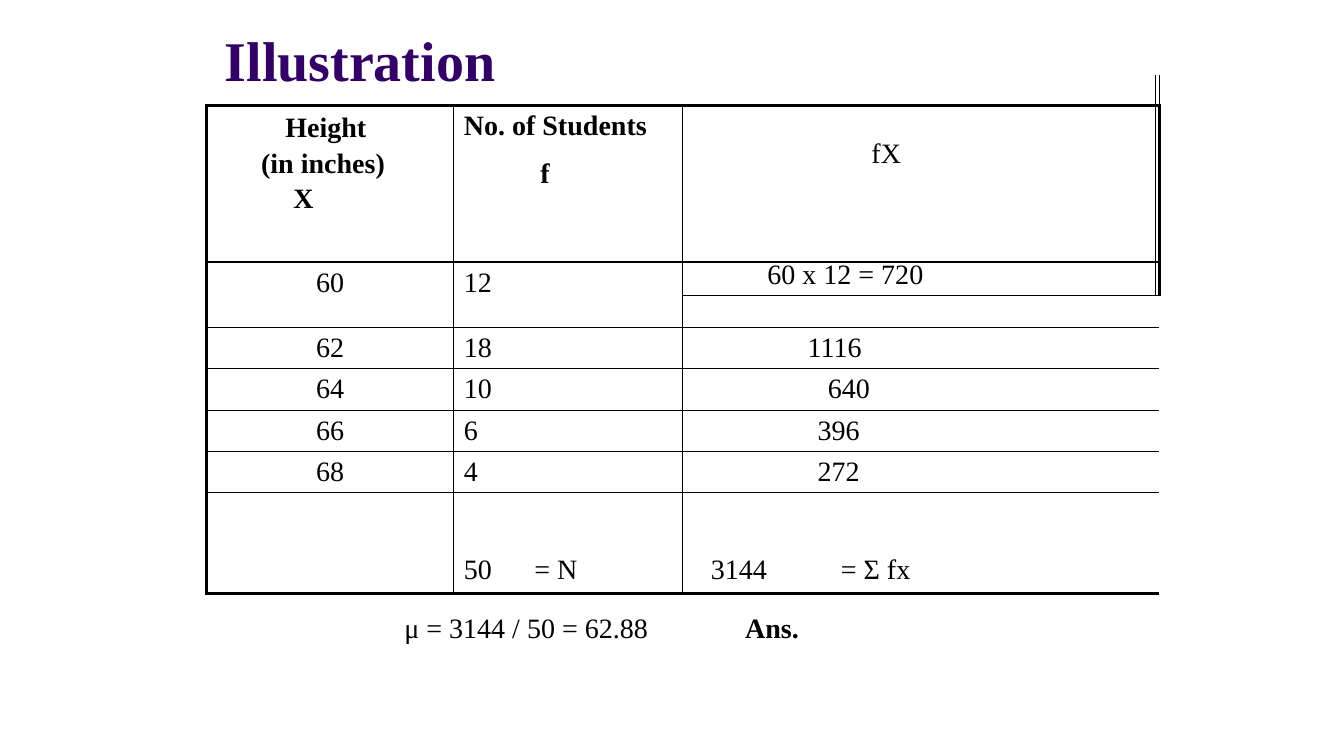
import pptx
import pptx.dml.color
import pptx.enum.text
import pptx.oxml
import pptx.oxml.ns
import pptx.util

Inches, Pt = pptx.util.Inches, pptx.util.Pt
CENTER = pptx.enum.text.PP_ALIGN.CENTER
FONT = "Times New Roman"
BLACK, PURPLE = "000000", "330066"
PLAIN_STYLE = "{2D5ABB26-0587-4C30-8999-92F81FD0307C}"

SLIDE_W, SLIDE_H = 13.33, 7.5
TABLE_LEFT, TABLE_TOP = 2.05, 0.74
COLUMNS = [2.45, 2.27, 4.69, 0.03]
ROWS = [0.31, 1.55, 0.33, 0.32] + [0.41] * 4 + [1]
THICK, MEDIUM, THIN = 2.25, 1, 0.75

# Height, number of students, product, indent of the product; the first
# height takes two table rows
FREQUENCIES = [
    ("60", "12", "60 x 12 = 720", 0.84),
    ("62", "18", "1116", 1.24),
    ("64", "10", "640", 1.44),
    ("66", "6", "396", 1.34),
    ("68", "4", "272", 1.34),
]


def color(hex_string):
    return pptx.dml.color.RGBColor.from_string(hex_string)


def write(frame, text, size=20, bold=False, ink=BLACK, align=None, left=0,
          right=0, first=0, line=None, before=None, tab=None, top=None,
          new=False, bold_tail=""):
    """Write one paragraph; lengths in inches, line and before in points."""
    paragraph = frame.add_paragraph() if new else frame.paragraphs[0]
    if top is not None:
        frame.margin_top = Inches(top)
    properties = paragraph._p.get_or_add_pPr()
    for name, length in (("marL", left), ("marR", right), ("indent", first)):
        if length:
            properties.set(name, str(Inches(length)))
    if line:
        paragraph.line_spacing = Pt(line)
    if before:
        paragraph.space_before = Pt(before)
    if tab:
        properties.append(pptx.oxml.parse_xml(
            f'<a:tabLst {pptx.oxml.ns.nsdecls("a")}>'
            f'<a:tab pos="{Inches(tab)}" algn="l"/></a:tabLst>'))
    if align is not None:
        paragraph.alignment = align
    for part, is_bold in ((text, bold), (bold_tail, True)):
        if part:
            run = paragraph.add_run()
            run.text = part
            run.font.name, run.font.size = FONT, Pt(size)
            run.font.bold = is_bold
            run.font.color.rgb = color(ink)


def write_cell(cell, text, **style):
    style.setdefault("top", 0.05)
    cell.margin_top = Inches(style.pop("top"))
    write(cell.text_frame, text, **style)


def rule_above(row, column):
    if row == 0:
        return 0
    if row in (1, len(ROWS)):
        return THICK
    if row == 3:
        return THIN if column >= 2 else 0
    return MEDIUM


def rule_left(row, column):
    if row == 0:
        return THIN if column >= 3 else 0
    if column in (0, len(COLUMNS)):
        return THICK
    if column == 3 and row > 2:
        return 0
    return THIN


def draw_rules(cell, row, column):
    properties = cell._tc.get_or_add_tcPr()
    sides = (("lnL", rule_left(row, column)),
             ("lnR", rule_left(row, column + 1)),
             ("lnT", rule_above(row, column)),
             ("lnB", rule_above(row + 1, column)))
    for side, weight in sides:
        paint = (f'<a:solidFill><a:srgbClr val="{BLACK}"/></a:solidFill>'
                 if weight else "<a:noFill/>")
        properties.append(pptx.oxml.parse_xml(
            f'<a:{side} {pptx.oxml.ns.nsdecls("a")} w="{Pt(weight)}">'
            f'{paint}</a:{side}>'))


def add_frequency_table(slide):
    table = slide.shapes.add_table(
        len(ROWS), len(COLUMNS), Inches(TABLE_LEFT), Inches(TABLE_TOP),
        Inches(sum(COLUMNS)), Inches(sum(ROWS))).table
    table.first_row = table.horz_banding = False
    table._tbl.tblPr.find(pptx.oxml.ns.qn("a:tableStyleId")).text = PLAIN_STYLE
    for column, width in zip(table.columns, COLUMNS):
        column.width = Inches(width)
    for row, height in zip(table.rows, ROWS):
        row.height = Inches(height)
    for row in range(len(ROWS)):
        for column in range(len(COLUMNS)):
            cell = table.cell(row, column)
            cell.margin_left = cell.margin_right = 0
            cell.margin_top = cell.margin_bottom = 0
            draw_rules(cell, row, column)
            cell.fill.background()

    # Merged cells
    table.cell(0, 0).merge(table.cell(0, 2))
    for column in (0, 1):
        table.cell(2, column).merge(table.cell(3, column))
    for row in range(3, len(ROWS)):
        table.cell(row, 2).merge(table.cell(row, 3))
    return table


def fill_headings(table):
    write_cell(table.cell(0, 0), "Illustration", size=40, bold=True,
               ink=PURPLE, left=0.18, line=13.3, top=0)
    height, students, product = (table.cell(1, column) for column in range(3))
    height.margin_right = Inches(0.53)
    write_cell(height, "Height (in inches)", bold=True, left=0.54, first=0.24,
               line=26.1, top=0.01)
    write(height.text_frame, "X", bold=True, align=CENTER, before=2.8, new=True)
    write_cell(students, "No. of Students", bold=True, left=0.1)
    write(students.text_frame, "f", bold=True, align=CENTER, right=0.46,
          before=12, new=True)
    write_cell(product, "fX", align=CENTER, right=0.65, top=0.32)


def fill_frequencies(table):
    for index, (height, students, product, indent) in enumerate(FREQUENCIES):
        row = 2 if index == 0 else index + 3
        write_cell(table.cell(row, 0), height, align=CENTER)
        write_cell(table.cell(row, 1), students, left=0.1)
        write_cell(table.cell(row, 2), product, left=indent,
                   line=16.6 if index == 0 else None)


def fill_totals(table):
    last = len(ROWS) - 1
    write_cell(table.cell(last, 1), "50\t= N", left=0.1, tab=0.7,
               line=19.8, top=0.64)
    write_cell(table.cell(last, 2), "3144\t= Σ fx", left=0.28, tab=1.29,
               line=19.8, top=0.64)


def add_answer(slide):
    frame = slide.shapes.add_textbox(
        Inches(4), Inches(6.04), Inches(4.11), Inches(0.35)).text_frame
    frame.word_wrap = True
    frame.margin_left = frame.margin_right = frame.margin_bottom = 0
    write(frame, "μ = 3144 / 50 = 62.88\t", left=0.01, tab=3.38, top=0.02,
          bold_tail="Ans.")


def main():
    deck = pptx.Presentation()
    deck.slide_width, deck.slide_height = Inches(SLIDE_W), Inches(SLIDE_H)
    slide = deck.slides.add_slide(deck.slide_layouts[6])
    table = add_frequency_table(slide)
    fill_headings(table)
    fill_frequencies(table)
    fill_totals(table)
    add_answer(slide)
    deck.save("out.pptx")


if __name__ == "__main__":
    main()
